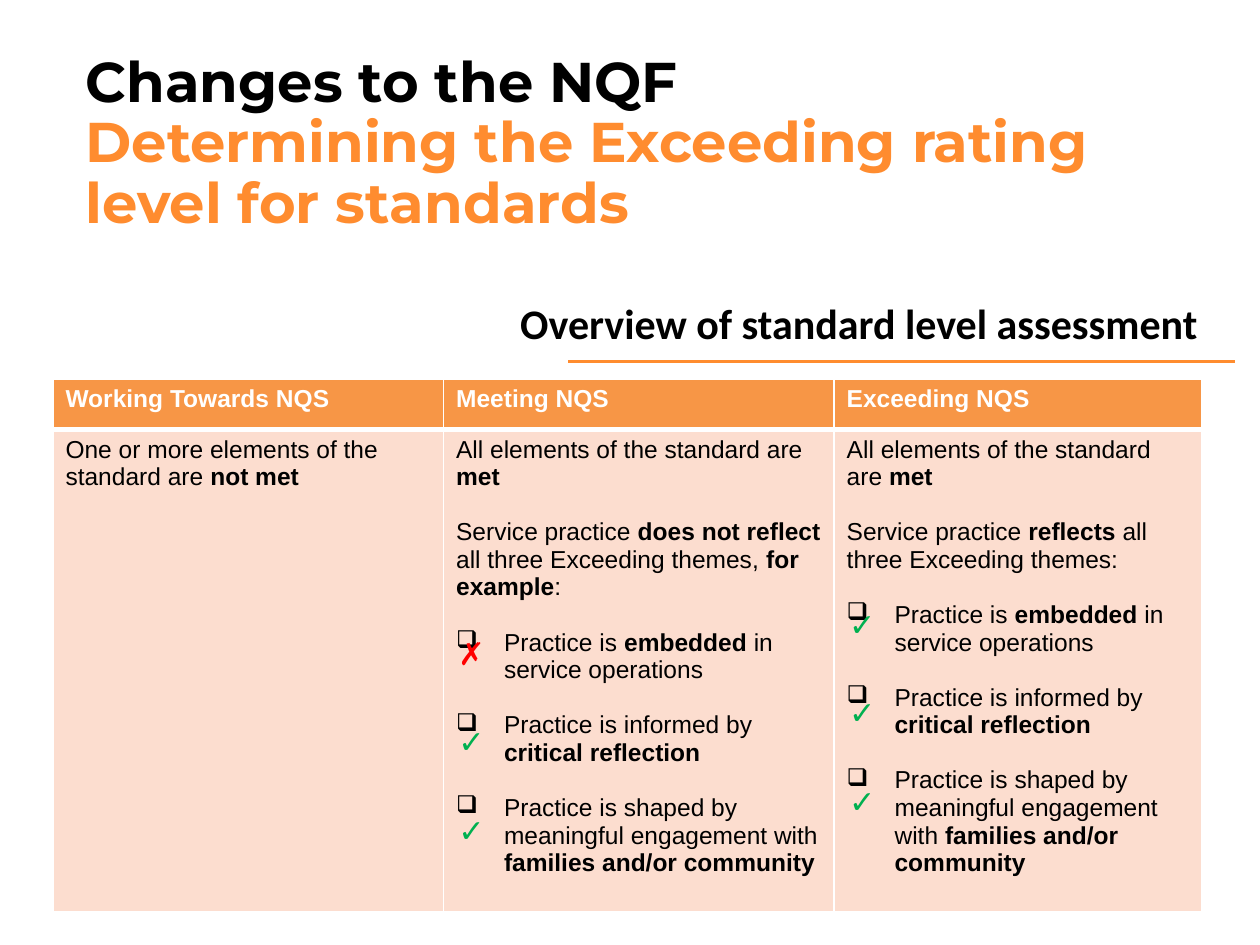
from lxml import etree
from pptx import Presentation
from pptx.dml.color import RGBColor
from pptx.enum import shapes, text
from pptx.oxml import ns
from pptx.util import Inches, Pt

BLACK = RGBColor(0, 0, 0)
WHITE = RGBColor(255, 255, 255)
ORANGE = RGBColor(0xFF, 0x8C, 0x2F)
HEAD = RGBColor(0xF7, 0x96, 0x46)
PEACH = RGBColor(0xFC, 0xDD, 0xCF)
GREEN = RGBColor(0, 0xB0, 0x50)
RED = RGBColor(255, 0, 0)

TITLE = ("Changes to the NQF", "Determining the Exceeding rating level for standards")
SUB = "Overview of standard level assessment"
# Runs alternate between regular and bold, starting with regular.
MET = ["All elements of the standard are ", "met"]
THEMES = [
    ["Practice is ", "embedded", " in service operations"],
    ["Practice is informed by ", "critical reflection"],
    ["Practice is shaped by meaningful engagement with ", "families and/or community"],
]
# Heading, plain paragraphs, bulleted paragraphs
LEVELS = [
    ("Working Towards NQS",
     [["One or more elements of the standard are ", "not met"]], []),
    ("Meeting NQS",
     [MET, ["Service practice ", "does not reflect", " all three Exceeding themes, ",
            "for example", ":"]], THEMES),
    ("Exceeding NQS",
     [MET, ["Service practice ", "reflects ", "all three Exceeding themes:"]], THEMES),
]
WIDTHS = [3.1, 3.1, 2.92]
ROWS = [0.4, 3.83]
MARKS = [(3.54, 4.98, "✗✓✓"), (6.64, 4.75, "✓✓✓")]
STEP = 0.705  # distance between marks
GAP = Pt(15.8)  # one line of table text


def add_run(para, words, size, font, color, bold=False):
    run = para.add_run()
    run.text = words
    run.font.size = Pt(size)
    run.font.name = font
    run.font.bold = bold
    run.font.color.rgb = color


def add_box(slide, left, top, width, height):
    """Add a wrapping text box and return its first paragraph."""
    box = slide.shapes.add_textbox(*map(Inches, (left, top, width, height)))
    frame = box.text_frame
    frame.word_wrap = True
    frame.auto_size = text.MSO_AUTO_SIZE.SHAPE_TO_FIT_TEXT
    return frame.paragraphs[0]


def style_cell(cell, color, top, bottom):
    """Give white borders, with top and bottom widths in points, and a fill."""
    props = cell._tc.get_or_add_tcPr()
    for side, width in zip("LRTB", (1, 1, top, bottom)):
        line = etree.SubElement(props, ns.qn("a:ln" + side), w=str(Pt(width)))
        fill = etree.SubElement(line, ns.qn("a:solidFill"))
        etree.SubElement(fill, ns.qn("a:srgbClr"), val=str(WHITE))
    cell.fill.solid()
    cell.fill.fore_color.rgb = color


def add_bullet(para):
    props = para._p.get_or_add_pPr()
    props.set("marL", str(Inches(0.38)))
    props.set("indent", str(Inches(-0.38)))
    etree.SubElement(props, ns.qn("a:buChar"), char="❑")


def fill_body(cell, plain, listed):
    frame = cell.text_frame
    for num, parts in enumerate(plain + listed):
        para = frame.add_paragraph() if num else frame.paragraphs[0]
        if num:
            para.space_before = GAP
        if num >= len(plain):
            add_bullet(para)
        for pos, words in enumerate(parts):
            add_run(para, words, 14, "Arial", BLACK, pos % 2 == 1)


def add_levels(slide):
    frame = slide.shapes.add_table(len(ROWS), len(LEVELS), Inches(0.42), Inches(3.01),
                                   Inches(sum(WIDTHS)), Inches(sum(ROWS)))
    table = frame.table
    for row, height in zip(table.rows, ROWS):
        row.height = Inches(height)
    for col, (name, plain, listed) in enumerate(LEVELS):
        table.columns[col].width = Inches(WIDTHS[col])
        head, body = table.cell(0, col), table.cell(1, col)
        style_cell(head, HEAD, 1, 3)
        style_cell(body, PEACH, 3, 1)
        add_run(head.text_frame.paragraphs[0], name, 14, "Arial", WHITE, True)
        fill_body(body, plain, listed)


def main():
    deck = Presentation()
    deck.slide_width, deck.slide_height = Inches(10), Inches(7.5)
    slide = deck.slides.add_slide(deck.slide_layouts[6])

    para = add_box(slide, 0.58, 0.38, 8.3, 1.56)
    para.line_spacing = 0.9
    add_run(para, TITLE[0], 32, "Montserrat", BLACK, True)
    para.add_line_break()
    add_run(para, TITLE[1], 32, "Montserrat", ORANGE, True)

    rule = slide.shapes.add_connector(shapes.MSO_CONNECTOR.STRAIGHT, Inches(4.51),
                                      Inches(2.87), Inches(9.8), Inches(2.87))
    rule.line.color.rgb = ORANGE
    rule.line.width = Pt(2)
    etree.SubElement(rule._element.spPr, ns.qn("a:effectLst"))

    add_run(add_box(slide, 4.03, 2.31, 5.75, 0.5), SUB, 24, "Calibri", BLACK, True)
    add_levels(slide)

    for left, top, marks in MARKS:
        for num, mark in enumerate(marks):
            para = add_box(slide, left, top + num * STEP, 0.32, 0.4)
            add_run(para, mark, 18, "Calibri", GREEN if mark == "✓" else RED)
    deck.save("out.pptx")


if __name__ == "__main__":
    main()
